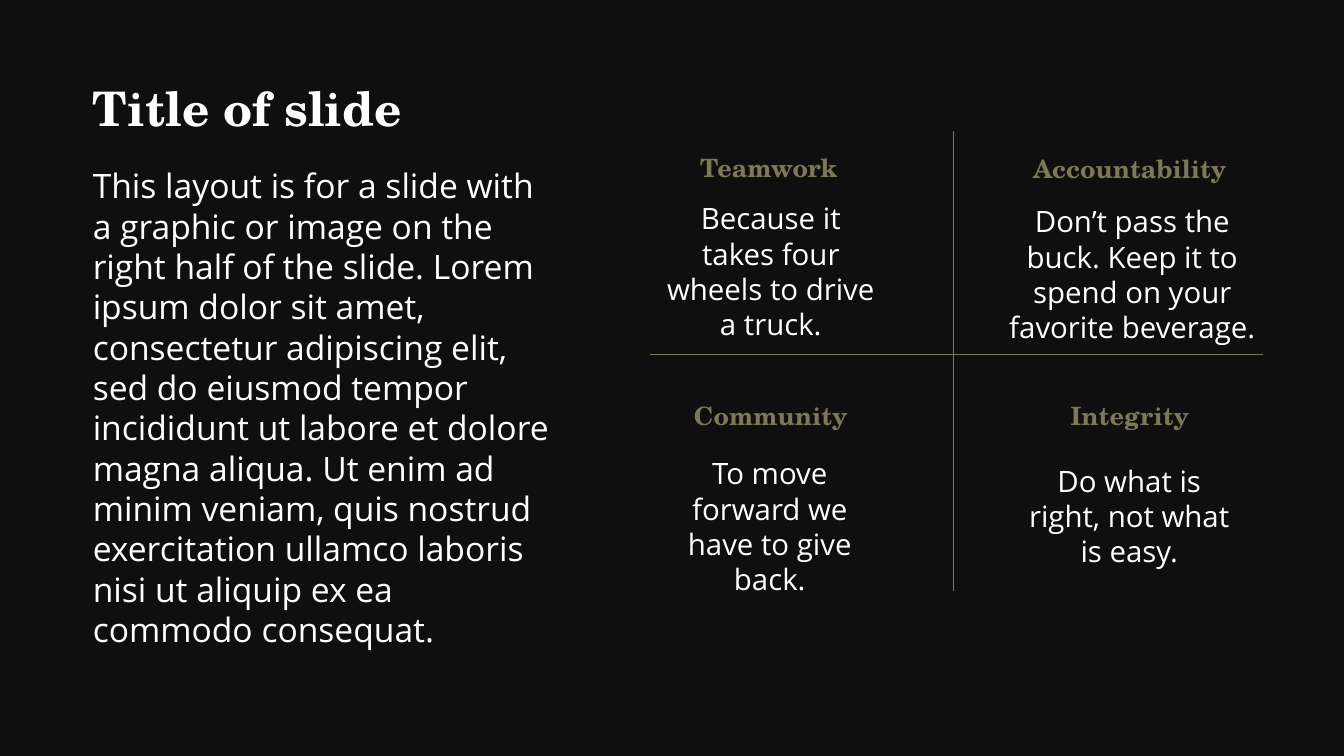
import pptx
import pptx.util
import pptx.dml.color
import pptx.enum.shapes
import pptx.enum.text
import pptx.oxml.xmlchemy
from pptx.util import Inches

COLOURS = {"ground": "0F0F0F", "text": "FFFFFF", "accent": "7E785A"}
HEADING_FONT = "TeX Gyre Schola"
BODY_FONT = "Open Sans"
ALIGN = pptx.enum.text.PP_ALIGN
ANCHOR = pptx.enum.text.MSO_ANCHOR
AUTO_SIZE = pptx.enum.text.MSO_AUTO_SIZE

BODY_TEXT = (
    "This layout is for a slide with a graphic or image on the right half of the slide. "
    "Lorem ipsum dolor sit amet, consectetur adipiscing elit, sed do eiusmod tempor "
    "incididunt ut labore et dolore magna aliqua. Ut enim ad minim veniam, quis nostrud "
    "exercitation ullamco laboris nisi ut aliquip ex ea commodo consequat."
)

VALUES = [
    ("Teamwork", (6.49, 1.46, 2.27, 0.4),
     "Because it takes four wheels to drive a truck.", (6.47, 1.94, 2.35, 1.5)),
    ("Accountability", (10.07, 1.47, 2.27, 0.4),
     "Don’t pass the buck. Keep it to spend on your favorite beverage.",
     (9.77, 1.97, 2.92, 1.5)),
    ("Community", (6.51, 3.92, 2.27, 0.4),
     "To move forward we have to give back.", (6.45, 4.47, 2.37, 1.5)),
    ("Integrity", (10.07, 3.92, 2.27, 0.4),
     "Do what is right, not what is easy.", (10.07, 4.54, 2.26, 1.15)),
]


def colour(name):
    return pptx.dml.color.RGBColor.from_string(COLOURS[name])


def write(box, text, size, font=BODY_FONT, ink="text", bold=False,
          align=ALIGN.CENTER, spacing=None, anchor=ANCHOR.TOP):
    frame = box.text_frame
    frame.word_wrap = True
    frame.auto_size = AUTO_SIZE.NONE
    frame.vertical_anchor = anchor
    para = frame.paragraphs[0]
    para.alignment = align
    para.space_before = pptx.util.Pt(0)
    if spacing:
        para.line_spacing = spacing
    span = para.add_run()
    span.text = text
    span.font.name = font
    span.font.size = pptx.util.Pt(size)
    span.font.bold = bold
    span.font.color.rgb = colour(ink)
    return para


class Builder:
    """Hold the slide's style and the page being built."""

    def __init__(self, deck):
        self.page = deck.slides.add_slide(deck.slide_layouts[1])
        fill = self.page.background.fill
        fill.solid()
        fill.fore_color.rgb = colour("ground")

    def place(self, box, area):
        box.left, box.top, box.width, box.height = map(Inches, area)
        return box

    def title(self, text, area):
        box = self.place(self.page.shapes.title, area)
        write(box, text, 34, font=HEADING_FONT, bold=True, align=ALIGN.LEFT,
              spacing=0.7, anchor=ANCHOR.MIDDLE)

    def body(self, text, area):
        box = self.place(self.page.placeholders[1], area)
        para = write(box, text, 24, align=ALIGN.LEFT, spacing=pptx.util.Pt(28.8))
        properties = para._p.get_or_add_pPr()
        properties.set("marL", "0")
        properties.set("indent", "0")
        properties.append(pptx.oxml.xmlchemy.OxmlElement("a:buNone"))

    def text(self, text, area, size, **style):
        box = self.page.shapes.add_textbox(*map(Inches, area))
        write(box, text, size, **style)

    def value(self, name, name_area, saying, saying_area):
        self.text(name, name_area, 18, font=HEADING_FONT, ink="accent", bold=True)
        self.text(saying, saying_area, 21, spacing=pptx.util.Pt(25.2))

    def line(self, *ends):
        line = self.page.shapes.add_connector(
            pptx.enum.shapes.MSO_CONNECTOR.STRAIGHT, *map(Inches, ends))
        line.line.color.rgb = colour("accent")
        line.line.width = pptx.util.Pt(0.5)
        line._element.spPr.append(pptx.oxml.xmlchemy.OxmlElement("a:effectLst"))


def main():
    deck = pptx.Presentation()
    deck.slide_width = Inches(13.33)
    deck.slide_height = Inches(7.5)
    builder = Builder(deck)
    builder.title("Title of slide", (0.82, 0.86, 4.88, 0.56))
    builder.body(BODY_TEXT, (0.82, 1.59, 4.78, 4.86))
    for value in VALUES:
        builder.value(*value)
    builder.line(9.46, 1.3, 9.46, 5.86)
    builder.line(6.45, 3.52, 12.53, 3.52)
    deck.save("out.pptx")


if __name__ == "__main__":
    main()
